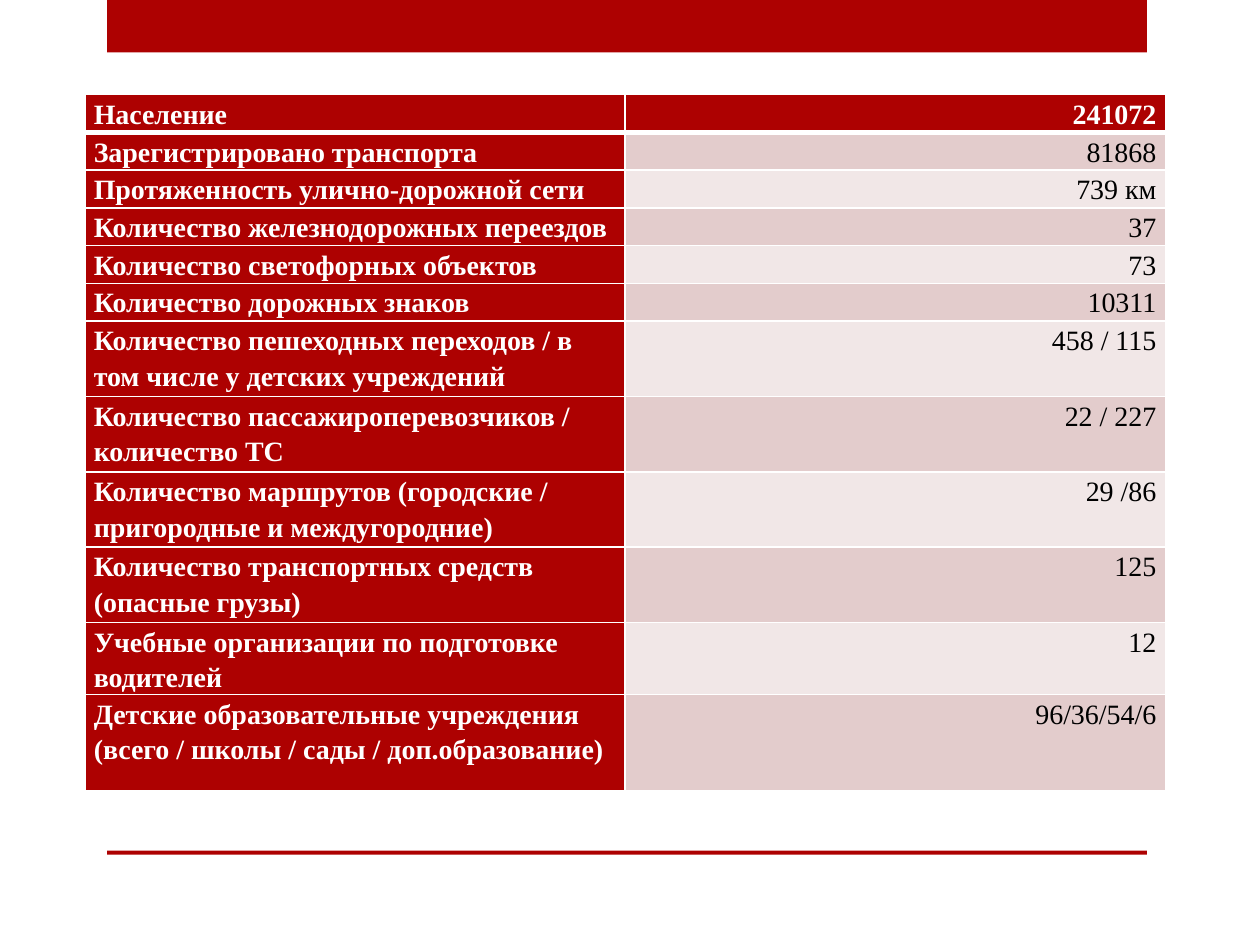
from lxml import etree
from pptx import Presentation
from pptx.dml.color import RGBColor
from pptx.enum.shapes import MSO_SHAPE
from pptx.enum.text import PP_ALIGN
from pptx.oxml.ns import qn
from pptx.util import Cm, Pt

RECT = MSO_SHAPE.RECTANGLE
LEFT, RIGHT = PP_ALIGN.LEFT, PP_ALIGN.RIGHT
RED = RGBColor(0xAD, 0x01, 0x01)
WHITE = RGBColor(0xFF, 0xFF, 0xFF)
BLACK = RGBColor(0x00, 0x00, 0x00)
PINK = RGBColor(0xE3, 0xCC, 0xCC)
PALE = RGBColor(0xF1, 0xE7, 0xE7)
FONT = "Times New Roman"

ONE_LINE, TWO_LINES = 0.76, 1.52
ROWS = [
    ("Население", "241072", ONE_LINE),
    ("Зарегистрировано транспорта", "81868", ONE_LINE),
    ("Протяженность улично-дорожной сети", "739 км", ONE_LINE),
    ("Количество железнодорожных переездов", "37", ONE_LINE),
    ("Количество светофорных объектов", "73", ONE_LINE),
    ("Количество дорожных знаков", "10311", ONE_LINE),
    ("Количество пешеходных переходов / в том числе у детских учреждений",
     "458 / 115", TWO_LINES),
    ("Количество пассажироперевозчиков / количество ТС", "22 / 227", TWO_LINES),
    ("Количество маршрутов (городские / пригородные и междугородние)",
     "29 /86", TWO_LINES),
    ("Количество транспортных средств (опасные грузы)", "125", TWO_LINES),
    ("Учебные организации по подготовке водителей", "12", 1.45),
    ("Детские образовательные учреждения (всего / школы / сады / доп.образование)",
     "96/36/54/6", 1.95),
]
BARS = [(0, 1.06), (17.15, 0.08)]
COL_W = 10.89


def add_bar(s, top, height):
    bar = s.shapes.add_shape(RECT, Cm(2.16), Cm(top), Cm(20.96), Cm(height))
    bar.shadow.inherit = False
    bar.fill.solid()
    bar.fill.fore_color.rgb = RED
    bar.line.fill.background()


def set_borders(cell, widths):
    tcPr = cell._tc.get_or_add_tcPr()
    for side, width in widths.items():
        ln = etree.SubElement(tcPr, qn(f"a:ln{side}"), w=str(Pt(width)))
        fill = etree.SubElement(ln, qn("a:solidFill"))
        etree.SubElement(fill, qn("a:srgbClr"), val=str(WHITE))


def fill_cell(cell, text, align, fill, color, bold, widths):
    set_borders(cell, widths)
    cell.fill.solid()
    cell.fill.fore_color.rgb = fill
    cell.margin_left = cell.margin_right = Cm(0.18)
    cell.margin_top = cell.margin_bottom = 0
    cell.text_frame.text = text
    p = cell.text_frame.paragraphs[0]
    p.alignment = align
    p.line_spacing = 1.15
    font = p.runs[0].font
    font.name, font.size, font.bold = FONT, Pt(16), bold
    font.color.rgb = color


def add_table(s):
    total = sum(height for _, _, height in ROWS)
    table = s.shapes.add_table(len(ROWS), 2, Cm(1.71), Cm(1.91),
                               Cm(2 * COL_W), Cm(total)).table
    for col in table.columns:
        col.width = Cm(COL_W)
    for i, (label, value, height) in enumerate(ROWS):
        table.rows[i].height = Cm(height)
        header = i == 0
        widths = {"L": 1, "R": 1, "T": 3 if i == 1 else 1, "B": 3 if header else 1}
        band = RED if header else (PINK if i % 2 else PALE)
        fill_cell(table.cell(i, 0), label, LEFT, RED, WHITE, True, widths)
        fill_cell(table.cell(i, 1), value, RIGHT, band,
                  WHITE if header else BLACK, header, widths)


def main():
    prs = Presentation()
    prs.slide_width, prs.slide_height = Cm(25.4), Cm(19.05)
    s = prs.slides.add_slide(prs.slide_layouts[6])
    for top, height in BARS:
        add_bar(s, top, height)
    add_table(s)
    prs.save("out.pptx")


if __name__ == "__main__":
    main()
